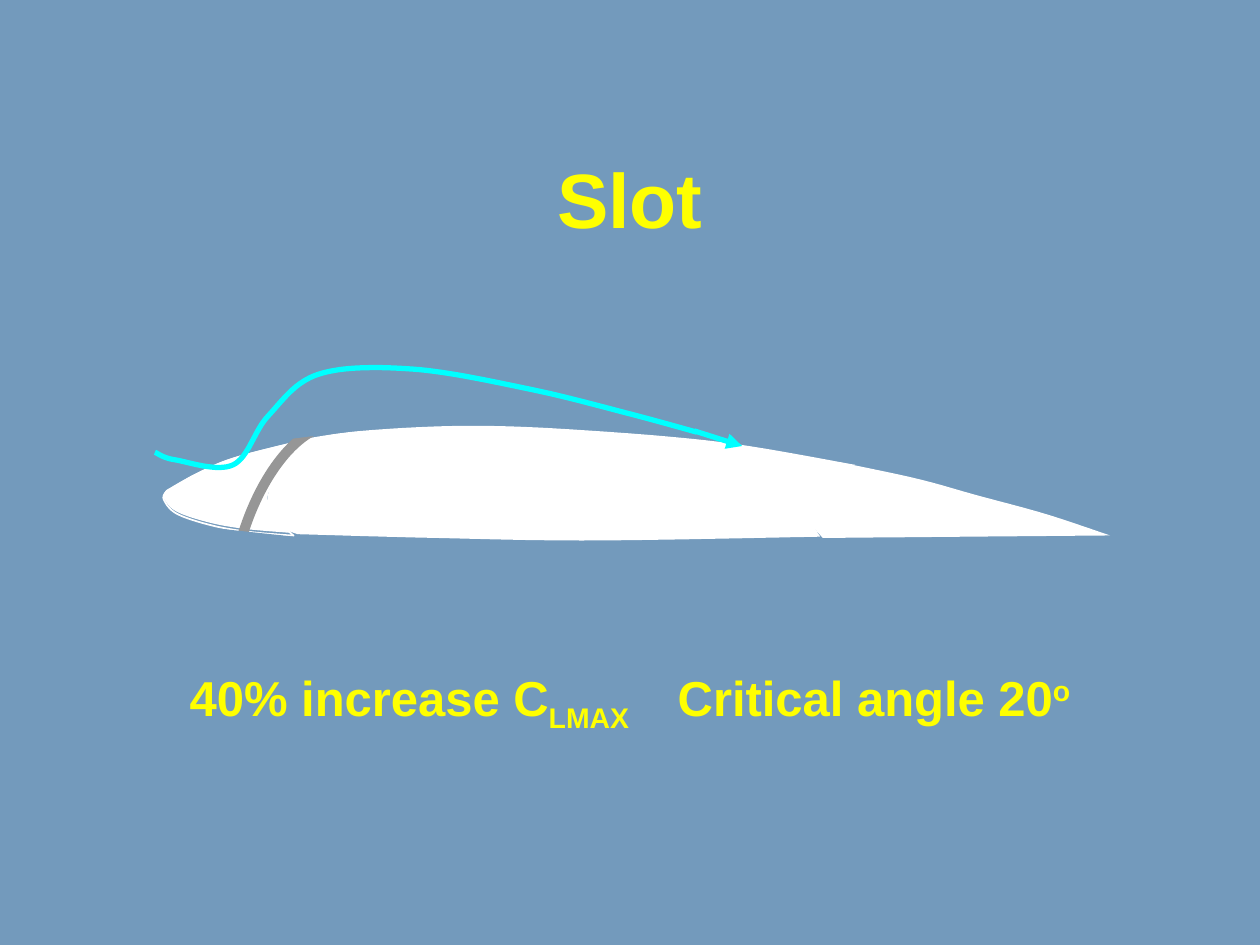
from pptx import Presentation
from pptx.dml.color import RGBColor
from pptx.enum.shapes import MSO_CONNECTOR, MSO_SHAPE
from pptx.enum.text import MSO_ANCHOR, PP_ALIGN
from pptx.oxml.ns import qn
from pptx.util import Inches, Pt
from lxml.etree import SubElement

THEME = {
    "font": "Arial", "title": 44, "caption": 28,
    "sky": RGBColor(0x73, 0x9A, 0xBC), "text": RGBColor(0xFF, 0xFF, 0x00),
    "wing": RGBColor(0xFF, 0xFF, 0xFF), "slot": RGBColor(0x96, 0x96, 0x96),
    "air": RGBColor(0x00, 0xFF, 0xFF),
    "skin_width": 1, "slot_width": 5.75, "air_width": 3,
}

TITLE = [("Slot", 0, 0)]
CAPTION = [
    ("40% increase C", 0, 0), ("LMAX", -25, 0), (" ", 0, 20),
    ("Critical angle 20", 0, 0), ("o", 30, 0),
]
TITLE_BOX = (0, 1.15, 10, 0.84)
CAPTION_BOX = (0, 5.25, 10, 0.57)

TAIL = {
    "top": [(6.67, 3.67), (7.28, 3.8), (7.75, 3.93), (8.3, 4.08)],
    "bottom": [(8.81, 4.25)],
    "seam": [(6.53, 4.27), (6.36, 4.05), (6.41, 3.86)],
}
MIDDLE = {
    "top": [(2.38, 3.49), (2.87, 3.42), (3.69, 3.38), (4.56, 3.41), (5.73, 3.51)],
    "rear seam": [(6.79, 3.69), (6.49, 3.82), (6.4, 4.04)],
    "bottom": [(6.51, 4.26), (4.71, 4.29), (3.46, 4.27)],
    "front seam": [(2.36, 4.24), (2.18, 4.16), (2.12, 4.02), (2.17, 3.81)],
}
NOSE = {
    "top": [(2.37, 3.5), (1.86, 3.63), (1.57, 3.75)],
    "bottom": [(1.32, 3.89), (1.3, 3.95), (1.4, 4.06), (1.67, 4.15), (1.96, 4.2)],
    "seam": [(2.31, 4.23), (2.15, 4.07), (2.14, 3.89)],
}
NOSE_CORNER = (1.3, 3.5)
SKIN_SCALE = (1.02, 1.03)

SLOT_CURVE = {"box": (1.23, 2.61, 2.91, 1.73), "turn": 90, "bend": 0.462}
SLOT_TRIMS = [((1.35, 1.86, 2.68, 1.57), 352.9), ((1.35, 4.22, 1.18, 0.94), 6.1)]

AIRFLOW = [
    (1.23, 3.59), (1.39, 3.65), (1.85, 3.69), (2.13, 3.3), (2.53, 2.97),
    (3.28, 2.93), (4.21, 3.09), (4.98, 3.28), (5.53, 3.43),
]
AIR_ARROW = ((5.51, 3.42), (5.89, 3.54))


def inches(values):
    return [Inches(value) for value in values]


def smooth(knots, steps=16):
    padded = [knots[0], *knots, knots[-1]]
    points = [knots[0]]
    for before, start, end, after in zip(padded, padded[1:], padded[2:], padded[3:]):
        for step in range(1, steps + 1):
            t = step / steps
            points.append(tuple(
                b + (c - a) * t / 2
                + (2 * a - 5 * b + 4 * c - d) * t ** 2 / 2
                + (3 * b - a - 3 * c + d) * t ** 3 / 2
                for a, b, c, d in zip(before, start, end, after)))
    return points


def join_edges(section):
    edges = list(section.values())
    outline = []
    for edge, following in zip(edges, edges[1:] + edges[:1]):
        outline += smooth(edge + following[:1])[:-1]
    return outline


def stretch(points, corner, scale):
    return [tuple(c + (value - c) * s for value, c, s in zip(point, corner, scale))
            for point in points]


def paint(shape, fill=None, line=None, width=1):
    shape.shadow.inherit = False
    if fill is None:
        shape.fill.background()
    else:
        shape.fill.solid()
        shape.fill.fore_color.rgb = fill
    if line is None:
        shape.line.fill.background()
    else:
        shape.line.color.rgb = line
        shape.line.width = Pt(width)


def add_curve(slide, points, closed=True, **colours):
    start, *rest = [inches(point) for point in points]
    builder = slide.shapes.build_freeform(*start, scale=1.0)
    builder.add_line_segments(rest, close=closed)
    paint(builder.convert_to_shape(), **colours)


def add_line(slide, kind, start, end, colour, width):
    line = slide.shapes.add_connector(kind, *inches((*start, *end)))
    line.line.color.rgb = colour
    line.line.width = Pt(width)
    SubElement(line._element.spPr, qn("a:effectLst"))
    return line


def add_wing(slide):
    for section in (TAIL, MIDDLE, NOSE):
        add_curve(slide, join_edges(section), fill=THEME["wing"])
    skin = stretch(join_edges(NOSE), NOSE_CORNER, SKIN_SCALE)
    add_curve(slide, skin, line=THEME["wing"], width=THEME["skin_width"])


def add_slot(slide):
    left, top, width, height = SLOT_CURVE["box"]
    curve = add_line(slide, MSO_CONNECTOR.CURVE, (left, top),
                     (left + width, top + height), THEME["slot"], THEME["slot_width"])
    properties = curve._element.spPr
    properties.find(qn("a:xfrm")).set("rot", str(SLOT_CURVE["turn"] * 60000))
    adjustments = properties.find(qn("a:prstGeom")).get_or_add_avLst()
    SubElement(adjustments, qn("a:gd"), name="adj1",
               fmla=f"val {round(SLOT_CURVE['bend'] * 100000)}")
    for box, turn in SLOT_TRIMS:
        trim = slide.shapes.add_shape(MSO_SHAPE.RECTANGLE, *inches(box))
        trim.rotation = turn
        paint(trim, fill=THEME["sky"])


def add_airflow(slide):
    add_curve(slide, smooth(AIRFLOW), closed=False,
              line=THEME["air"], width=THEME["air_width"])
    arrow = add_line(slide, MSO_CONNECTOR.STRAIGHT, *AIR_ARROW,
                     THEME["air"], THEME["air_width"])
    SubElement(arrow.line._get_or_add_ln(), qn("a:tailEnd"), type="triangle")


def write_line(holder, runs, size):
    frame = holder.text_frame
    frame.word_wrap = True
    frame.vertical_anchor = MSO_ANCHOR.TOP
    frame.margin_top = Inches(0.05)
    paragraph = frame.paragraphs[0]
    paragraph.alignment = PP_ALIGN.CENTER
    paragraph.space_before = Pt(0)
    for text, baseline, spacing in runs:
        run = paragraph.add_run()
        run.text = text
        run.font.name = THEME["font"]
        run.font.size = Pt(size)
        run.font.bold = True
        run.font.color.rgb = THEME["text"]
        if baseline:
            run.font._element.set("baseline", str(baseline * 1000))
        if spacing:
            run.font._element.set("spc", str(spacing * 100))


def main():
    deck = Presentation()
    deck.slide_width, deck.slide_height = inches((10, 7.5))
    slide = deck.slides.add_slide(deck.slide_layouts[5])
    slide.background.fill.solid()
    slide.background.fill.fore_color.rgb = THEME["sky"]

    title = slide.shapes.title
    title.left, title.top, title.width, title.height = inches(TITLE_BOX)
    write_line(title, TITLE, THEME["title"])
    add_wing(slide)
    add_slot(slide)
    add_airflow(slide)
    caption = slide.shapes.add_textbox(*inches(CAPTION_BOX))
    write_line(caption, CAPTION, THEME["caption"])
    deck.save("out.pptx")


if __name__ == "__main__":
    main()
